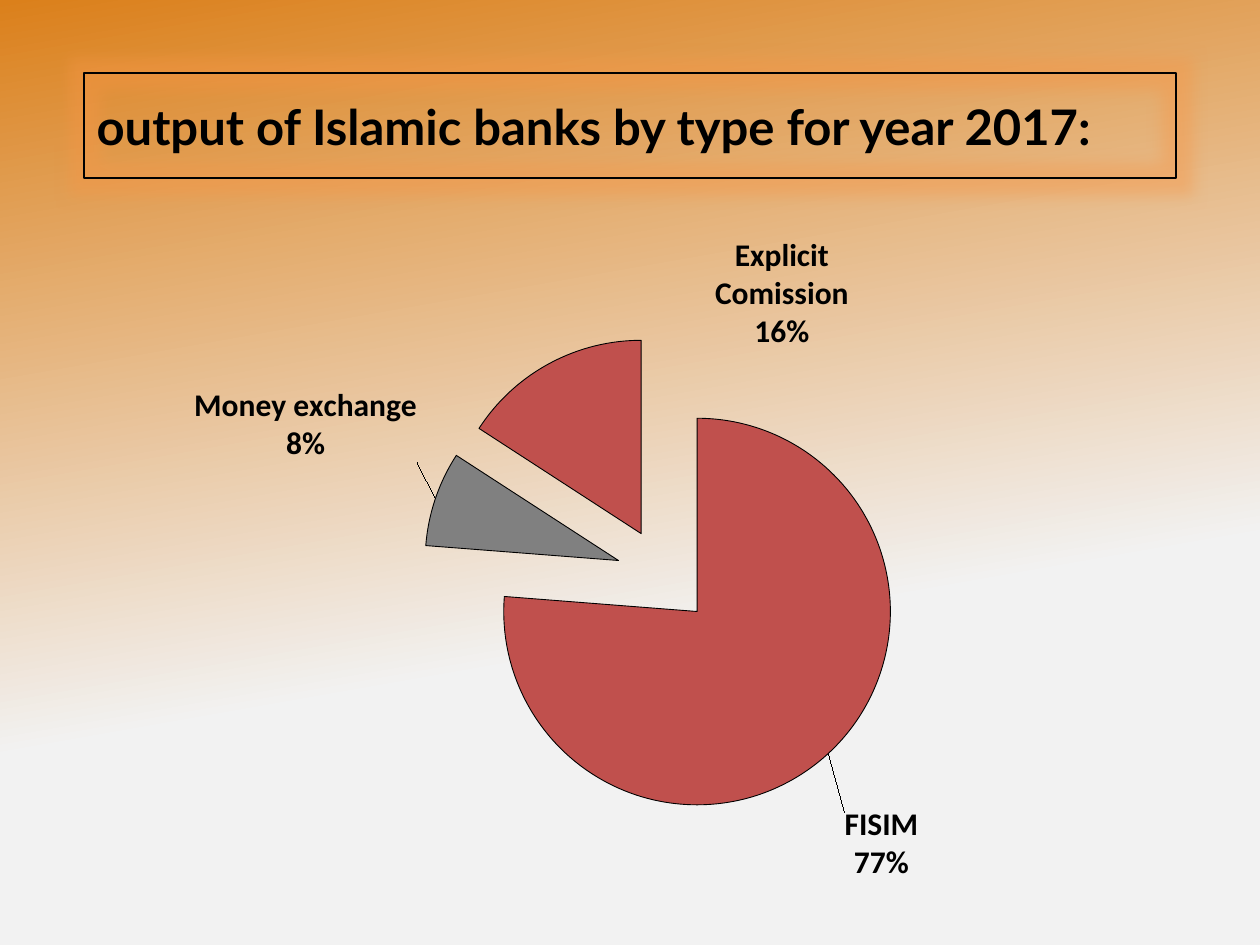
"""Build a slide with a framed title and an exploded pie of bank output by type."""
from copy import deepcopy

from pptx import Presentation
from pptx.chart.data import CategoryChartData
from pptx.dml.color import RGBColor
from pptx.enum.chart import XL_CHART_TYPE as ChartType
from pptx.enum.text import MSO_ANCHOR as Anchor, PP_ALIGN as Align
from pptx.oxml import parse_xml
from pptx.oxml.ns import nsdecls
from pptx.util import Pt

PX = 914400 // 126
BLACK = RGBColor(0x00, 0x00, 0x00)
RED = RGBColor(0xC0, 0x50, 0x4D)
GRAY = RGBColor(0x80, 0x80, 0x80)
ORANGE = RGBColor(0xDB, 0x80, 0x1B)
PALE = RGBColor(0xF2, 0xF2, 0xF2)
GLOW = RGBColor(0xF7, 0x96, 0x46)

TITLE = "output of Islamic banks by type for year 2017:"
TITLE_BOX = (84, 73, 1092, 105)
CHART_BOX = (63, 210, 1124, 672)
PIE_BOX = (426, 332, 488, 488)
STOPS = [(0, ORANGE), (0.65, PALE), (1, PALE)]
SLICES = [
    ("FISIM", 77, RED, (16, 54)),
    ("Money exchange", 8, GRAY, (-7, -36)),
    ("Explicit Comission", 16, RED, (299, -6)),
]

LABEL_FORMAT = """
<c:numFmt formatCode="0&quot;%&quot;" sourceLinked="0"/>
<c:txPr><a:bodyPr/><a:p><a:pPr><a:defRPr sz="1800" b="1"/></a:pPr>
<a:endParaRPr lang="en-US"/></a:p></c:txPr>
<c:dLblPos val="outEnd"/><c:showLegendKey val="0"/><c:showVal val="1"/>
<c:showCatName val="1"/><c:showSerName val="0"/><c:showPercent val="0"/>
<c:showBubbleSize val="0"/><c:separator>\n</c:separator>"""


def emu(lengths):
    return [length * PX for length in lengths]


def set_values(target, values):
    for name, value in values.items():
        setattr(target, name, value)


def layout(values, modes=""):
    parts = "".join(f'<c:{key} val="{value:.2f}"/>' for key, value in zip("xywh", values))
    return f"<c:layout><c:manualLayout>{modes}{parts}</c:manualLayout></c:layout>"


def paint_background(slide):
    fill = slide.background.fill
    fill.gradient()
    fill.gradient_angle = 280
    last = slide.element.xpath("./p:cSld/p:bg//a:gs")[-1]
    last.addnext(deepcopy(last))
    for stop, (position, color) in zip(fill.gradient_stops, STOPS):
        stop.position = position
        stop.color.rgb = color


def add_title(slide):
    box = slide.shapes.title
    set_values(box, dict(zip(("left", "top", "width", "height"), emu(TITLE_BOX))))
    box.line.color.rgb = BLACK
    box.line.width = Pt(1.5)
    box.element.spPr.append(parse_xml(
        f'<a:effectLst {nsdecls("a")}><a:glow rad="228600"><a:srgbClr val="{GLOW}">'
        '<a:alpha val="40000"/></a:srgbClr></a:glow></a:effectLst>'))
    set_values(box.text_frame, {"word_wrap": True, "vertical_anchor": Anchor.MIDDLE})
    para = box.text_frame.paragraphs[0]
    para.alignment = Align.LEFT
    span = para.add_run()
    span.text = TITLE
    set_values(span.font, {"name": "Lato", "size": Pt(28), "bold": True})
    span.font.color.rgb = BLACK


def add_pie(slide):
    data = CategoryChartData()
    data.categories = [name for name, *_ in SLICES]
    data.add_series("Series 1", [value for _, value, *_ in SLICES])
    chart = slide.shapes.add_chart(ChartType.PIE, *emu(CHART_BOX), data).chart
    set_values(chart, {"has_legend": False, "has_title": False})
    set_values(chart.font, {"name": "Calibri", "size": Pt(10)})
    chart.font.color.rgb = BLACK
    plot = chart.plots[0]
    plot.vary_by_categories = True

    left, top, width, height = CHART_BOX
    x, y, w, h = PIE_BOX
    modes = '<c:layoutTarget val="inner"/><c:xMode val="edge"/><c:yMode val="edge"/>'
    area = chart.element.xpath("./c:chart/c:plotArea")[0]
    for old in area.xpath("./c:layout"):
        area.remove(old)
    ratios = ((x - left) / width, (y - top) / height, w / width, h / height)
    area.insert(0, parse_xml(layout(ratios, modes).replace(
        "<c:layout>", f'<c:layout {nsdecls("c")}>')))

    labels = "".join(
        f'<c:dLbl><c:idx val="{index}"/>{layout((dx / width, dy / height))}{LABEL_FORMAT}</c:dLbl>'
        for index, (_, _, _, (dx, dy)) in enumerate(SLICES))
    categories = area.xpath(".//c:ser/c:cat")[0]
    categories.addprevious(parse_xml(f'<c:explosion {nsdecls("c")} val="25"/>'))
    categories.addprevious(parse_xml(
        f'<c:dLbls {nsdecls("c", "a")}>{labels}{LABEL_FORMAT}'
        '<c:showLeaderLines val="1"/></c:dLbls>'))
    for index, (_, _, color, _) in enumerate(SLICES):
        style = plot.series[0].points[index].format
        style.fill.solid()
        style.fill.fore_color.rgb = color
        style.line.color.rgb = BLACK
        style.line.width = Pt(0.5)


def main():
    deck = Presentation()
    deck.slide_width, deck.slide_height = emu((1260, 945))
    slide = deck.slides.add_slide(deck.slide_layouts[5])
    paint_background(slide)
    add_title(slide)
    add_pie(slide)
    deck.save("out.pptx")


if __name__ == "__main__":
    main()
